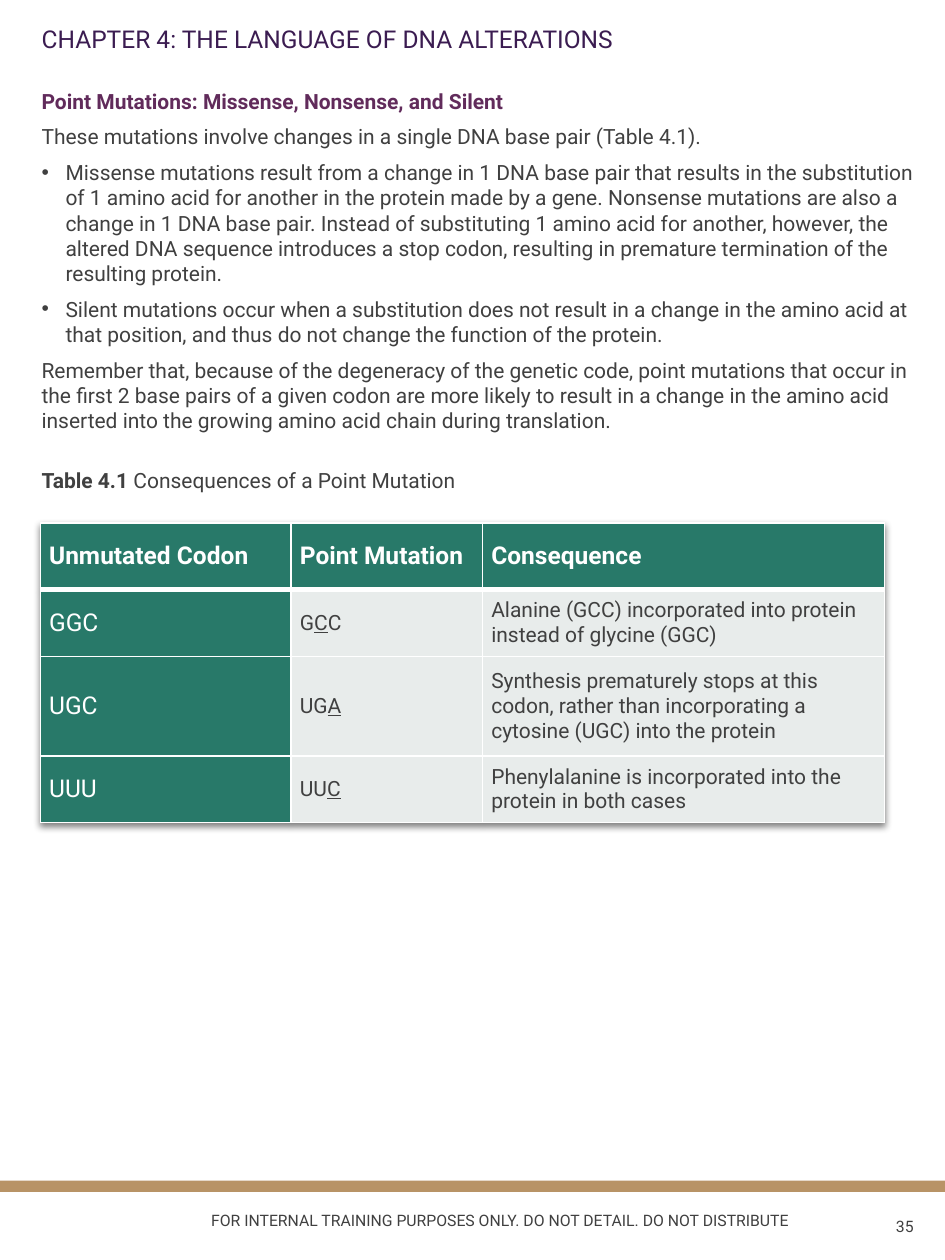
import pptx
import pptx.util
import pptx.dml.color
import pptx.enum.shapes
import pptx.enum.text
import pptx.oxml

Inches, Pt = pptx.util.Inches, pptx.util.Pt
Align = pptx.enum.text.PP_ALIGN
Anchor = pptx.enum.text.MSO_ANCHOR
NS = 'xmlns:a="http://schemas.openxmlformats.org/drawingml/2006/main"'

# Content: * surrounds bold, _ surrounds underline
FONT = "Roboto"
DARK, WHITE, GREEN, PALE = "404040", "FFFFFF", "287969", "E8ECEB"
PURPLE, PLUM, TAN = "3B1C51", "612B5B", "B89366"
TITLE = "CHAPTER 4: THE LANGUAGE OF DNA ALTERATIONS"
# Text, colour, bullet, space before
BODY = [
    ("*Point Mutations: Missense, Nonsense, and Silent*", PLUM, False, 0),
    ("These mutations involve changes in a single DNA base pair (Table 4.1).",
     DARK, False, 0),
    ("Missense mutations result from a change in 1 DNA base pair that results "
     "in the substitution of 1 amino acid for another in the protein made by "
     "a gene. Nonsense mutations are also a change in 1 DNA base pair. Instead "
     "of substituting 1 amino acid for another, however, the altered DNA "
     "sequence introduces a stop codon, resulting in premature termination of "
     "the resulting protein.", DARK, True, 0),
    ("Silent mutations occur when a substitution does not result in a change "
     "in the amino acid at that position, and thus do not change the function "
     "of the protein.", DARK, True, 0),
    ("Remember that, because of the degeneracy of the genetic code, point "
     "mutations that occur in the first 2 base pairs of a given codon are more "
     "likely to result in a change in the amino acid inserted into the growing "
     "amino acid chain during translation.", DARK, False, 0),
    ("*Table 4.1* Consequences of a Point Mutation", DARK, False, 14),
]
ROWS = [
    ("*Unmutated Codon*", "*Point Mutation*", "*Consequence*"),
    ("GGC", "G_C_C",
     "Alanine (GCC) incorporated into protein instead of glycine (GGC)"),
    ("UGC", "UG_A_", "Synthesis prematurely stops at this codon, rather than "
     "incorporating a cytosine (UGC) into the protein"),
    ("UUU", "UU_C_",
     "Phenylalanine is incorporated into the protein in both cases"),
]
WIDTHS = [1.99, 1.52, 3.19]
HEIGHTS = [0.53, 0.53, 0.79, 0.53]
# Text, place, alignment, anchor
FOOT = [
    ("FOR INTERNAL TRAINING PURPOSES ONLY. DO NOT DETAIL. DO NOT DISTRIBUTE",
     (1.29, 9.56, 5.35, 0.36), Align.CENTER, Anchor.TOP),
    ("35", (6.78, 9.55, 0.57, 0.37), Align.RIGHT, Anchor.MIDDLE),
]


def rgb(code):
    return pptx.dml.color.RGBColor.from_string(code)


def place(shape, left, top, width, height):
    shape.left, shape.top = Inches(left), Inches(top)
    shape.width, shape.height = Inches(width), Inches(height)


def write(para, text, size, color):
    """Fill a paragraph, turning marks into bold or underlined runs."""
    mark = "*" if "*" in text else "_"
    for i, part in enumerate(text.split(mark)):
        if not part:
            continue
        run = para.add_run()
        run.text = part
        font = run.font
        font.name, font.size = FONT, Pt(size)
        font.color.rgb = rgb(color)
        font.bold = mark == "*" and i % 2 == 1
        font.underline = mark == "_" and i % 2 == 1


def space(para, before, after):
    para.space_before, para.space_after = Pt(before), Pt(after)


def bullet(para, on):
    props = para._p.get_or_add_pPr()
    indent = Inches(0.19) if on else 0
    props.set("marL", str(indent))
    props.set("indent", str(-indent))
    tag = '<a:buChar %s char="•"/>' if on else "<a:buNone %s/>"
    props.append(pptx.oxml.parse_xml(tag % NS))


def border(cell, base):
    """White cell lines; base is the width of the bottom one."""
    props = cell._tc.get_or_add_tcPr()
    for side, width in zip("LRTB", (1, 1, 1, base)):
        props.append(pptx.oxml.parse_xml(
            f'<a:ln{side} {NS} w="{Pt(width)}"><a:solidFill>'
            f'<a:srgbClr val="{WHITE}"/></a:solidFill></a:ln{side}>'))


deck = pptx.Presentation()
deck.slide_width, deck.slide_height = Inches(7.5), Inches(10)
slide = deck.slides.add_slide(deck.slide_layouts[1])
shapes = slide.shapes

# Footer bar
bar = shapes.add_shape(pptx.enum.shapes.MSO_SHAPE.RECTANGLE, 0, Inches(9.37),
                       Inches(7.5), Inches(0.09))
bar.shadow.inherit = False
bar.fill.solid()
bar.fill.fore_color.rgb = rgb(TAN)
bar.line.fill.background()

# Title
title = shapes.title
place(title, 0.23, 0.07, 5.64, 0.5)
frame = title.text_frame
frame.auto_size = pptx.enum.text.MSO_AUTO_SIZE.NONE
frame.vertical_anchor = Anchor.MIDDLE
para = frame.paragraphs[0]
para.alignment, para.line_spacing = Align.LEFT, 0.9
write(para, TITLE, 14, PURPLE)

# Body
body = slide.placeholders[1]
place(body, 0.23, 0.65, 7.12, 3.5)
frame = body.text_frame
frame.auto_size = pptx.enum.text.MSO_AUTO_SIZE.NONE
frame.margin_right = 0
for i, (text, color, dot, before) in enumerate(BODY):
    para = frame.add_paragraph() if i else frame.paragraphs[0]
    bullet(para, dot)
    space(para, before, 6)
    write(para, text, 12, color)

# Codon table with a soft shadow
table = shapes.add_table(len(ROWS), len(WIDTHS), Inches(0.32), Inches(4.15),
                         Inches(sum(WIDTHS)), Inches(sum(HEIGHTS))).table
table._tbl.tblPr.insert(0, pptx.oxml.parse_xml(
    f'<a:effectLst {NS}><a:outerShdw blurRad="{Pt(4)}" dist="{Pt(2)}" '
    'dir="5400000"><a:srgbClr val="000000"><a:alpha val="50000"/>'
    '</a:srgbClr></a:outerShdw></a:effectLst>'))
for col, width in zip(table.columns, WIDTHS):
    col.width = Inches(width)
for r, (row, height) in enumerate(zip(ROWS, HEIGHTS)):
    table.rows[r].height = Inches(height)
    for c, text in enumerate(row):
        head = r == 0 or c == 0
        cell = table.cell(r, c)
        border(cell, 3 if r == 0 else 1)
        cell.fill.solid()
        cell.fill.fore_color.rgb = rgb(GREEN if head else PALE)
        cell.vertical_anchor = Anchor.MIDDLE
        cell.margin_left = cell.margin_right = Inches(0.07)
        cell.margin_top = cell.margin_bottom = 0
        para = cell.text_frame.paragraphs[0]
        space(para, 0, 0)
        write(para, text, 14 if head else 12, WHITE if head else DARK)

# Footer text
for text, spot, align, anchor in FOOT:
    frame = shapes.add_textbox(*map(Inches, spot)).text_frame
    frame.word_wrap = True
    frame.vertical_anchor = anchor
    para = frame.paragraphs[0]
    para.alignment = align
    write(para, text, 9, DARK)

deck.save("out.pptx")
